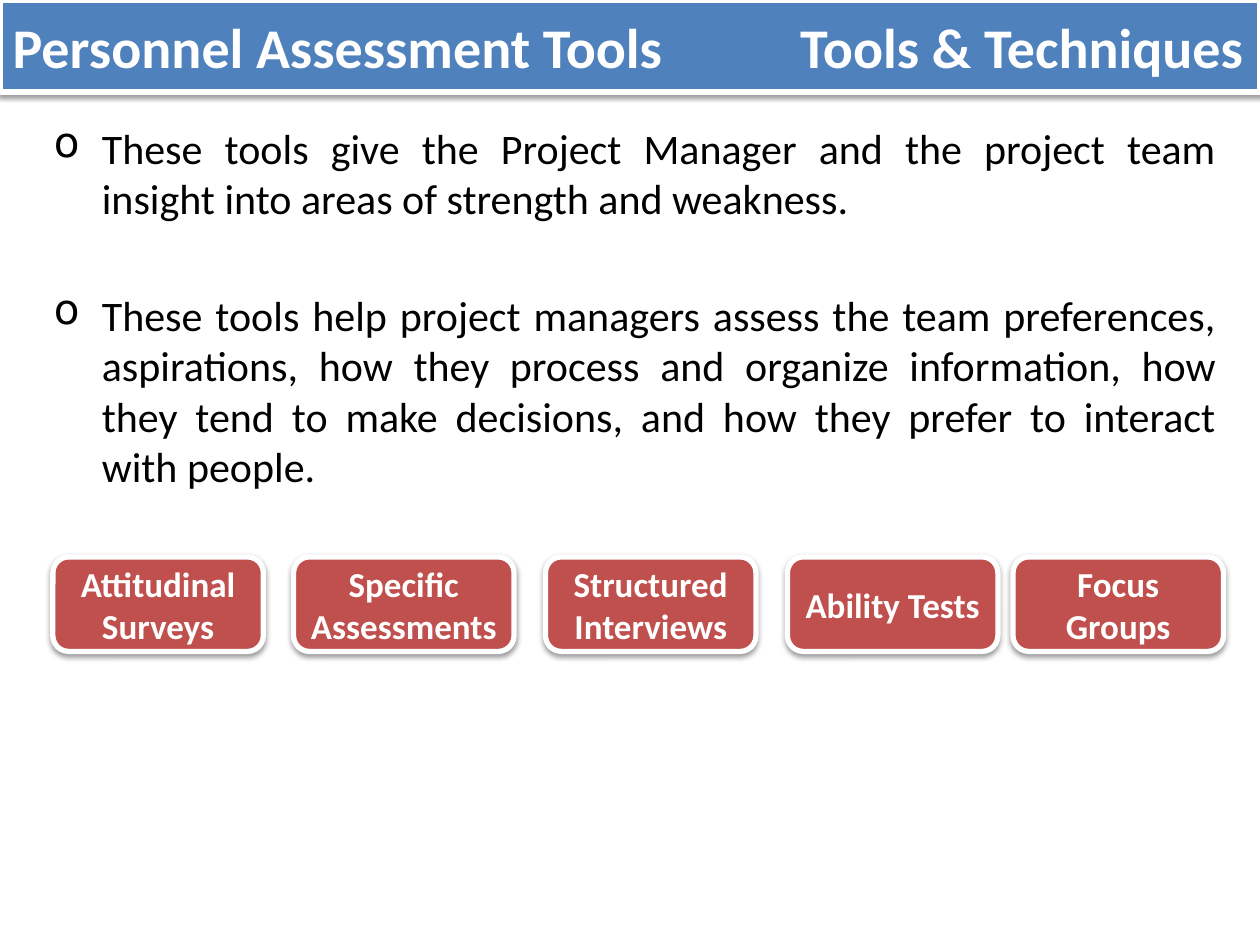
from lxml.etree import SubElement
from pptx import Presentation
from pptx.dml.color import RGBColor
from pptx.enum.shapes import MSO_SHAPE
from pptx.enum.text import MSO_ANCHOR, MSO_AUTO_SIZE, PP_ALIGN
from pptx.oxml.ns import qn
from pptx.util import Inches, Pt

BLUE, RED, WHITE, BLACK = "4F81BD", "C0504D", "FFFFFF", "000000"
TITLE = ("Personnel Assessment Tools", "Tools & Techniques")
POINTS = (
    "These tools give the Project Manager and the project team insight into "
    "areas of strength and weakness.",
    "These tools help project managers assess the team preferences, aspirations, "
    "how they process and organize information, how they tend to make decisions, "
    "and how they prefer to interact with people.",
)
# Label, left edge and width of each tool in the row
TOOLS = (
    ("Attitudinal Surveys", 0.42, 1.67),
    ("Specific Assessments", 2.33, 1.75),
    ("Structured Interviews", 4.33, 1.67),
    ("Ability Tests", 6.25, 1.67),
    ("Focus Groups", 8.04, 1.67),
)
ROW_TOP, ROW_HEIGHT = 4.42, 0.75


def rgb(color):
    return RGBColor.from_string(color)


def place(shape, left, top, width, height):
    shape.left, shape.top = Inches(left), Inches(top)
    shape.width, shape.height = Inches(width), Inches(height)


def style_text(paragraph, size, color, align, bold=False):
    paragraph.alignment = align
    font = paragraph.font
    font.name, font.size, font.bold = "Calibri", Pt(size), bold
    font.color.rgb = rgb(color)


def style_panel(panel, fill):
    """Solid fill, white border and a soft shadow straight below."""
    panel.fill.solid()
    panel.fill.fore_color.rgb = rgb(fill)
    panel.line.color.rgb = rgb(WHITE)
    panel.line.width = Pt(3)
    panel.shadow.inherit = False
    effects = panel._element.spPr.find(qn("a:effectLst"))
    shadow = SubElement(effects, qn("a:outerShdw"), blurRad=str(Pt(3.1)),
                        dist=str(Pt(1.6)), dir="5400000", rotWithShape="0")
    shade = SubElement(shadow, qn("a:srgbClr"), val=BLACK)
    SubElement(shade, qn("a:alpha"), val="38000")
    panel.text_frame.word_wrap = True
    panel.text_frame.vertical_anchor = MSO_ANCHOR.MIDDLE


def add_banner(slide):
    banner = slide.shapes.title
    place(banner, 0, 0, 10, 0.73)
    style_panel(banner, BLUE)
    banner.text_frame.auto_size = MSO_AUTO_SIZE.NONE
    banner.text_frame.text = "\t".join(TITLE)
    heading = banner.text_frame.paragraphs[0]
    # A right tab sends the second half to the far edge
    tabs = SubElement(heading._p.get_or_add_pPr(), qn("a:tabLst"))
    SubElement(tabs, qn("a:tab"), pos=str(Inches(9.77)), algn="r")
    style_text(heading, 32, WHITE, PP_ALIGN.LEFT, bold=True)


def add_points(slide):
    body = slide.shapes.add_textbox(0, 0, 0, 0)
    place(body, 0.33, 0.92, 9.42, 6.25)
    frame = body.text_frame
    frame.word_wrap = True
    frame.text = "\n".join(POINTS)
    for point in frame.paragraphs:
        properties = point._p.get_or_add_pPr()
        properties.set("marL", str(Inches(0.38)))
        properties.set("indent", str(-Inches(0.38)))
        SubElement(properties, qn("a:buChar"), char="o")
        style_text(point, 24, BLACK, PP_ALIGN.JUSTIFY)
    frame.paragraphs[1].space_before = Pt(38)


def add_tool(slide, label, left, width):
    tool = slide.shapes.add_shape(MSO_SHAPE.ROUNDED_RECTANGLE, 0, 0, 0, 0)
    place(tool, left, ROW_TOP, width, ROW_HEIGHT)
    style_panel(tool, RED)
    tool.text_frame.text = label
    style_text(tool.text_frame.paragraphs[0], 20, WHITE, PP_ALIGN.CENTER, bold=True)


def main():
    deck = Presentation()
    deck.slide_width, deck.slide_height = Inches(10), Inches(7.5)
    slide = deck.slides.add_slide(deck.slide_layouts[5])  # title only
    add_banner(slide)
    add_points(slide)
    for label, left, width in TOOLS:
        add_tool(slide, label, left, width)
    deck.save("out.pptx")


if __name__ == "__main__":
    main()
